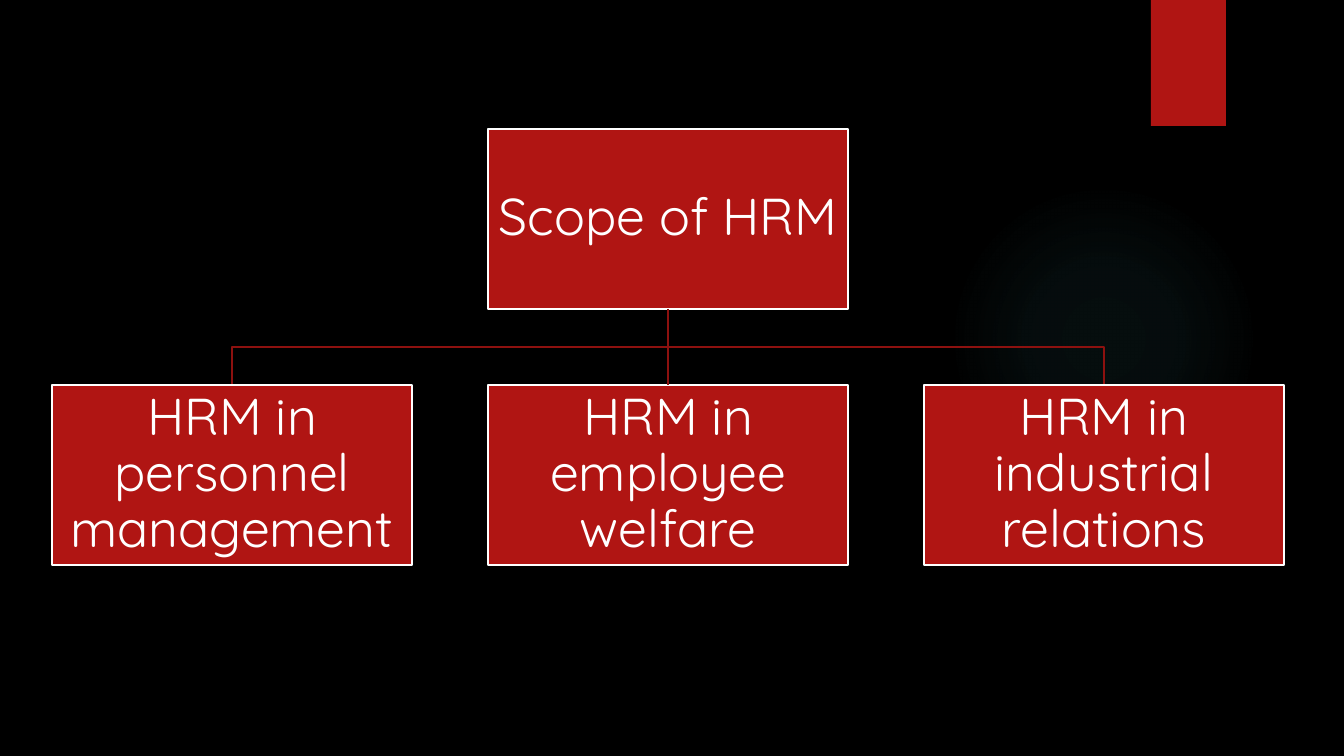
from lxml import etree
from pptx import Presentation
from pptx import util as u
from pptx.dml.color import RGBColor
from pptx.enum import shapes, text
from pptx.oxml import parse_xml
from pptx.oxml.ns import nsdecls, qn

ROOT = "Scope of HRM"
LEAVES = [
    "HRM in personnel management",
    "HRM in employee welfare",
    "HRM in industrial relations",
]
COLORS = {"back": "000000", "red": "B01513", "link": "8D110F",
          "white": "FFFFFF", "glow": "50B9C1"}
GLOW = [(0, 7), (36, 6), (69, 0)]  # position and opacity, in percent
FONT, SIZE, LINE = "Quicksand", 37, 1.5

PX = 914400 / 100.8
WIDE, HIGH = 1344, 756
LEFT, TOP, BOX_W, BOX_H = 52, 129, 360, 180
STEP_X, STEP_Y = 436, 256


def px(n):
    return u.Emu(round(n * PX))


def rgb(name):
    return RGBColor.from_string(COLORS[name])


def shape(kind, x, y, w, h):
    item = slide.shapes.add_shape(kind, px(x), px(y), px(w), px(h))
    item.shadow.inherit = False
    item.line.fill.background()
    return item


def block(x, y, w, h):
    item = shape(shapes.MSO_SHAPE.RECTANGLE, x, y, w, h)
    item.fill.solid()
    item.fill.fore_color.rgb = rgb("red")
    return item


def stroke(item, color):
    item.line.color.rgb = rgb(color)
    item.line.width = u.Pt(LINE)


def glow(x, y, size):
    """Draw a disc that fades out from its centre."""
    disc = shape(shapes.MSO_SHAPE.OVAL, x, y, size, size)
    stops = "".join(
        f'<a:gs pos="{pos * 1000}"><a:srgbClr val="{COLORS["glow"]}">'
        f'<a:alpha val="{alpha * 1000}"/></a:srgbClr></a:gs>'
        for pos, alpha in GLOW)
    fade = parse_xml(
        f'<a:gradFill {nsdecls("a")} rotWithShape="1"><a:gsLst>{stops}</a:gsLst>'
        '<a:path path="circle"><a:fillToRect l="50000" t="50000" r="50000" b="50000"/>'
        '</a:path></a:gradFill>')
    disc._element.spPr.find(qn("a:prstGeom")).addnext(fade)


def node(label, col, row):
    box = block(LEFT + col * STEP_X, TOP + row * STEP_Y, BOX_W, BOX_H)
    stroke(box, "white")
    frame = box.text_frame
    frame.word_wrap = True
    frame.vertical_anchor = text.MSO_ANCHOR.MIDDLE
    frame.margin_left = frame.margin_right = px(3)
    frame.margin_top = frame.margin_bottom = px(3)
    para = frame.paragraphs[0]
    para.alignment = text.PP_ALIGN.CENTER
    para.line_spacing = 0.9
    run = para.add_run()
    run.text = label
    run.font.name, run.font.size = FONT, u.Pt(SIZE)
    run.font.color.rgb = rgb("white")
    return box


def elbow(col):
    """Link the root to a side leaf with two right-angle bends."""
    start, end = LEFT + STEP_X + BOX_W / 2, LEFT + col * STEP_X + BOX_W / 2
    top, low = TOP + BOX_H, TOP + STEP_Y
    mid = (top + low) / 2
    pen = slide.shapes.build_freeform(px(start), px(top))
    pen.add_line_segments(
        [(px(start), px(mid)), (px(end), px(mid)), (px(end), px(low))], close=False)
    link = pen.convert_to_shape()
    link.shadow.inherit = False
    link.fill.background()
    stroke(link, "link")


def trunk(above, below):
    link = slide.shapes.add_connector(shapes.MSO_CONNECTOR.STRAIGHT, 0, 0, 0, 0)
    link.begin_connect(above, 2)
    link.end_connect(below, 0)
    stroke(link, "link")
    etree.SubElement(link._element.spPr, qn("a:effectLst"))


deck = Presentation()
deck.slide_width, deck.slide_height = px(WIDE), px(HIGH)
slide = deck.slides.add_slide(deck.slide_layouts[6])
slide.background.fill.solid()
slide.background.fill.fore_color.rgb = rgb("back")

glow(949, 184, 310)
block(1151, 0, 75, 126)
for side in (0, 2):
    elbow(side)
root = node(ROOT, 1, 0)
leaves = [node(label, col, 1) for col, label in enumerate(LEAVES)]
trunk(root, leaves[1])

deck.save("out.pptx")
